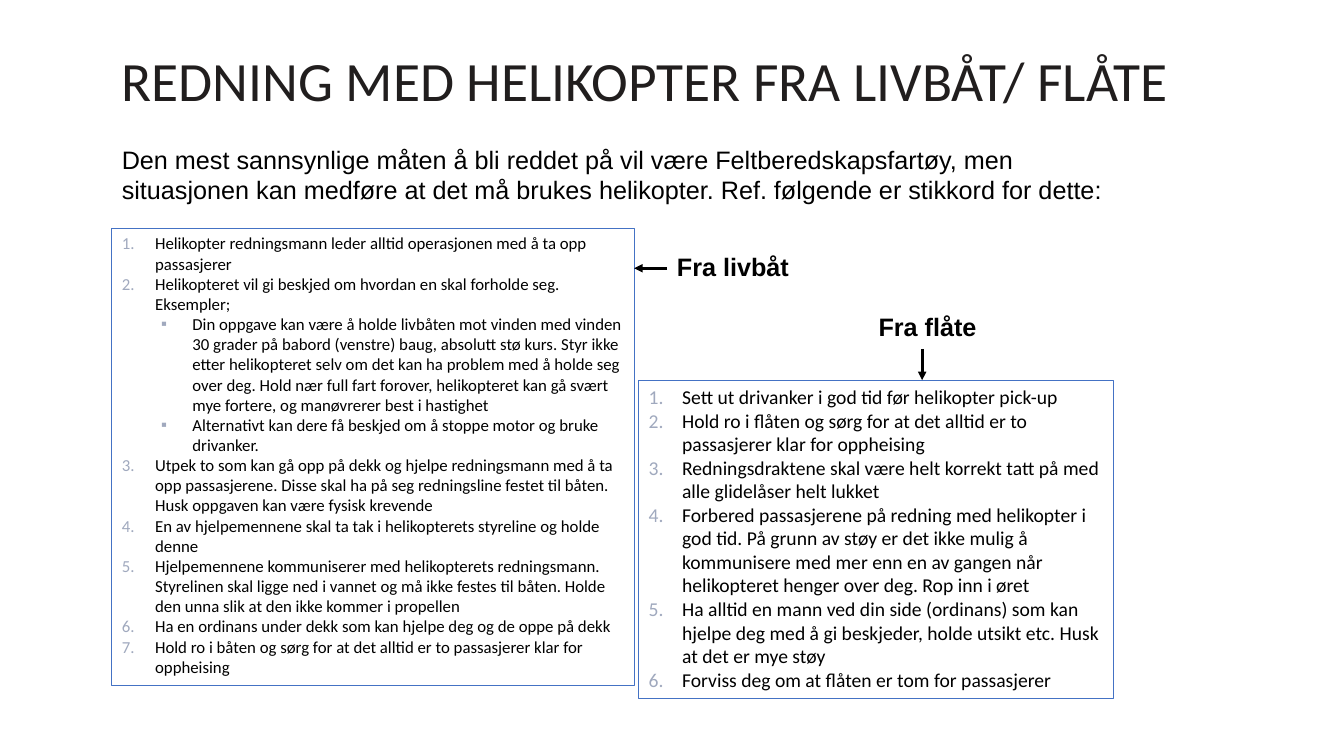
from lxml.etree import SubElement
from pptx import Presentation
from pptx.dml.color import RGBColor
from pptx.enum.shapes import MSO_CONNECTOR as Connector, MSO_SHAPE as Shape
from pptx.enum.text import MSO_ANCHOR as Anchor, MSO_AUTO_SIZE as AutoSize, PP_ALIGN as Align
from pptx.oxml.ns import qn
from pptx.util import Cm, Pt

BLACK, TITLE, BORDER, MARKER = "000000", "211E1E", "4472C4", "A0A9BE"
INDENTS = [(0.84, -0.84), (1.78, -0.79)]

INTRO = [
    "Den mest sannsynlige måten å bli reddet på vil være Feltberedskapsfartøy, men",
    "situasjonen kan medføre at det må brukes helikopter. Ref. følgende er stikkord for dette:",
]
LIFEBOAT_STEPS = [
    (0, "Helikopter redningsmann leder alltid operasjonen med å ta opp passasjerer"),
    (0, "Helikopteret vil gi beskjed om hvordan en skal forholde seg. Eksempler;"),
    (1, "Din oppgave kan være å holde livbåten mot vinden med vinden 30 grader på babord "
        "(venstre) baug, absolutt stø kurs. Styr ikke etter helikopteret selv om det kan ha "
        "problem med å holde seg over deg. Hold nær full fart forover, helikopteret kan gå "
        "svært mye fortere, og manøvrerer best i hastighet"),
    (1, "Alternativt kan dere få beskjed om å stoppe motor og bruke drivanker."),
    (0, "Utpek to som kan gå opp på dekk og hjelpe redningsmann med å ta opp passasjerene. "
        "Disse skal ha på seg redningsline festet til båten. Husk oppgaven kan være fysisk krevende"),
    (0, "En av hjelpemennene skal ta tak i helikopterets styreline og holde denne"),
    (0, "Hjelpemennene kommuniserer med helikopterets redningsmann. Styrelinen skal ligge ned "
        "i vannet og må ikke festes til båten. Holde den unna slik at den ikke kommer i propellen"),
    (0, "Ha en ordinans under dekk som kan hjelpe deg og de oppe på dekk"),
    (0, "Hold ro i båten og sørg for at det alltid er to passasjerer klar for oppheising"),
]
RAFT_STEPS = [
    (0, "Sett ut drivanker i god tid før helikopter pick-up"),
    (0, "Hold ro i flåten og sørg for at det alltid er to passasjerer klar for oppheising"),
    (0, "Redningsdraktene skal være helt korrekt tatt på med alle glidelåser helt lukket"),
    (0, "Forbered passasjerene på redning med helikopter i god tid. På grunn av støy er det "
        "ikke mulig å kommunisere med mer enn en av gangen når helikopteret henger over deg. "
        "Rop inn i øret"),
    (0, "Ha alltid en mann ved din side (ordinans) som kan hjelpe deg med å gi beskjeder, "
        "holde utsikt etc. Husk at det er mye støy"),
    (0, "Forviss deg om at flåten er tom for passasjerer"),
]


def color(value):
    return RGBColor.from_string(value)


class RescueSlide:
    """Holds the slide and its text and line styles."""

    def __init__(self, slide):
        self.shapes = slide.shapes

    def add_lines(self, frame, lines, size, font, ink=BLACK, bold=False):
        for number, line in enumerate(lines):
            paragraph = frame.paragraphs[0] if number == 0 else frame.add_paragraph()
            paragraph.alignment = Align.LEFT
            run = paragraph.add_run()
            run.text = line
            run.font.size, run.font.name, run.font.bold = Pt(size), font, bold
            run.font.color.rgb = color(ink)

    def text(self, box, lines, size, font="Arial", ink=BLACK, bold=False, wrap=True):
        frame = self.shapes.add_textbox(*map(Cm, box)).text_frame
        frame.word_wrap = wrap
        frame.auto_size = AutoSize.SHAPE_TO_FIT_TEXT
        self.add_lines(frame, lines, size, font, ink, bold)
        return frame

    def mark(self, paragraph, level):
        paragraph.level = level
        props = paragraph._p.get_or_add_pPr()
        margin, hanging = INDENTS[level]
        props.set("marL", str(Cm(margin)))
        props.set("indent", str(Cm(hanging)))
        SubElement(SubElement(props, qn("a:buClr")), qn("a:srgbClr"), val=MARKER)
        if level:
            SubElement(props, qn("a:buFont"), typeface="Arial")
            SubElement(props, qn("a:buChar"), char="▪")
        else:
            SubElement(props, qn("a:buFont"), typeface="+mj-lt")
            SubElement(props, qn("a:buAutoNum"), type="arabicPeriod")

    def steps(self, box, items, size):
        panel = self.shapes.add_shape(Shape.RECTANGLE, *map(Cm, box))
        panel.shadow.inherit = False
        panel.fill.background()
        panel.line.color.rgb = color(BORDER)
        panel.line.width = Pt(0.75)
        frame = panel.text_frame
        frame.word_wrap = True
        frame.vertical_anchor = Anchor.TOP
        frame.auto_size = AutoSize.SHAPE_TO_FIT_TEXT
        self.add_lines(frame, [line for _, line in items], size, "Calibri")
        for paragraph, (level, _) in zip(frame.paragraphs, items):
            self.mark(paragraph, level)

    def arrow(self, *ends):
        pointer = self.shapes.add_connector(Connector.STRAIGHT, *map(Cm, ends))
        pointer.line.color.rgb = color(BLACK)
        pointer.line.width = Pt(2)
        props = pointer._element.spPr
        SubElement(props.find(qn("a:ln")), qn("a:tailEnd"), type="triangle")
        SubElement(props, qn("a:effectLst"))


def main():
    deck = Presentation()
    deck.slide_width, deck.slide_height = Cm(33.87), Cm(19.05)
    page = RescueSlide(deck.slides.add_slide(deck.slide_layouts[6]))

    heading = page.text((2.82, 1.4, 30.28, 1.4), ["REDNING MED HELIKOPTER FRA LIVBÅT/ FLÅTE"],
                        39.6, "Calibri", TITLE)
    heading.auto_size = AutoSize.NONE
    heading.vertical_anchor = Anchor.MIDDLE
    heading.paragraphs[0].line_spacing = 0.9

    page.text((2.82, 3.5, 26.97, 1.8), INTRO, 18)
    page.steps((2.82, 5.75, 13.16, 11.53), LIFEBOAT_STEPS, 12)
    page.steps((16.1, 9.58, 11.96, 8.03), RAFT_STEPS, 14)

    labels = page.text((16.81, 6.22, 8.13, 2.57), ["Fra livbåt", "Fra flåte"], 18,
                       bold=True, wrap=False)
    raft_label = labels.paragraphs[1]
    raft_label.space_before = Pt(21)
    raft_label._p.get_or_add_pPr().set("marL", str(Cm(5.08)))

    page.arrow(16.81, 6.76, 15.98, 6.76)
    page.arrow(23.24, 8.79, 23.24, 9.58)
    deck.save("out.pptx")


if __name__ == "__main__":
    main()
